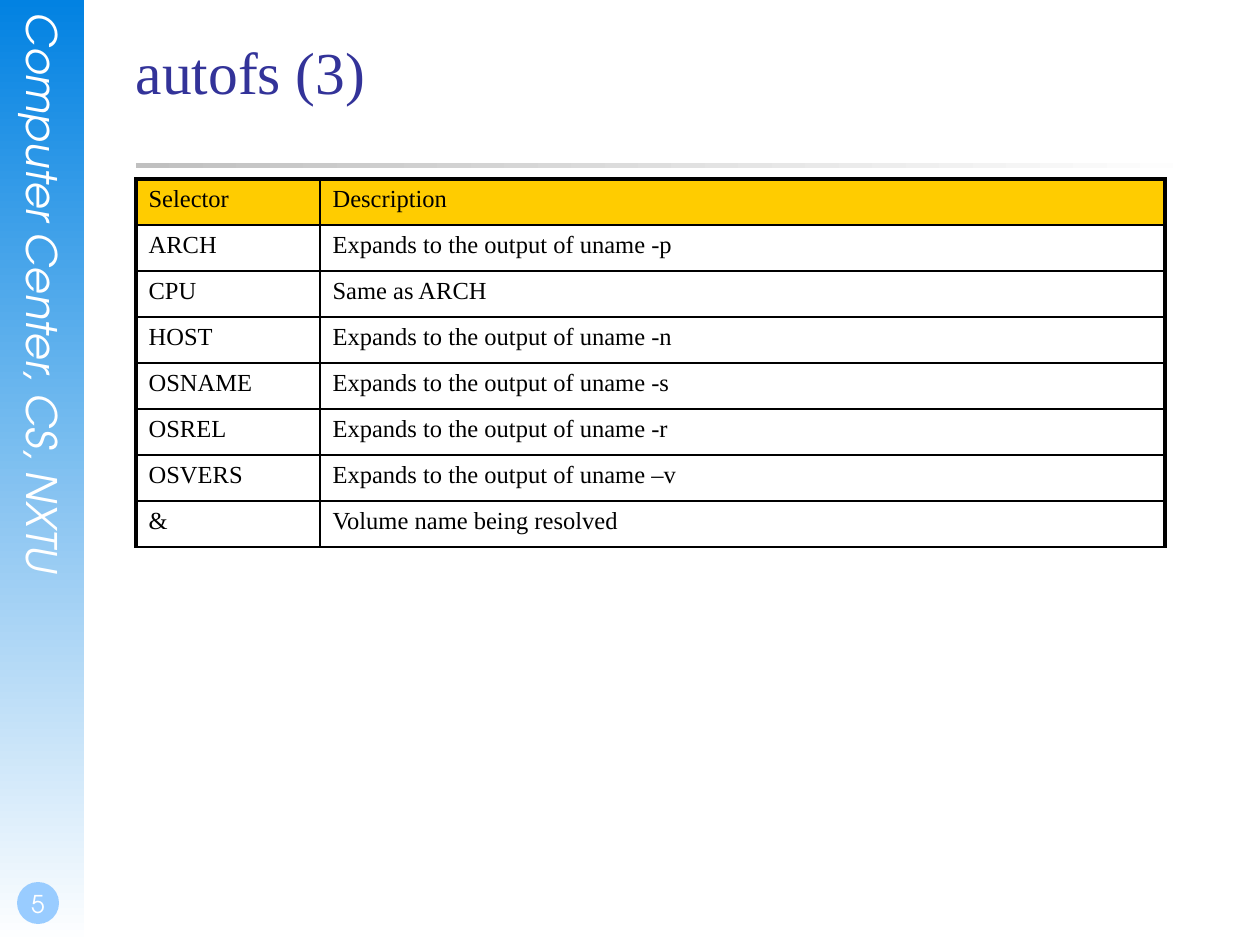
from lxml.etree import SubElement
from pptx import Presentation
from pptx.dml.color import RGBColor
from pptx.enum.shapes import MSO_SHAPE as SHAPE
from pptx.enum.text import MSO_ANCHOR as ANCHOR, PP_ALIGN as ALIGN
from pptx.oxml.ns import qn
from pptx.util import Emu, Pt

PX = 914400 / 126
SERIF, SANS = "Times New Roman", "TeX Gyre Adventor"


def px(*values):
    """Turn pixel lengths into EMU."""
    return [Emu(round(v * PX)) for v in values]


def rgb(color):
    return RGBColor.from_string(color)


prs = Presentation()
prs.slide_width, prs.slide_height = px(1260, 945)
s = prs.slides.add_slide(prs.slide_layouts[6])

# Sidebar, page number disc and title rule (angles run counter-clockwise)
for kind, box, colors, angle in [
    (SHAPE.RECTANGLE, (0, 0, 84, 945), ["0282E2", "FFFFFF"], 270),
    (SHAPE.OVAL, (17, 882, 42, 42), ["99CCFF"], None),
    (SHAPE.RECTANGLE, (136, 163, 1071, 5), ["C0C0C0", "FFFFFF"], 0),
]:
    sp = s.shapes.add_shape(kind, *px(*box))
    sp.shadow.inherit = False
    sp.line.fill.background()
    if angle is None:
        sp.fill.solid()
        sp.fill.fore_color.rgb = rgb(colors[0])
    else:
        sp.fill.gradient()
        sp.fill.gradient_angle = angle
        for stop, color in zip(sp.fill.gradient_stops, colors):
            stop.color.rgb = rgb(color)

# Sidebar caption, page number and title
for text, box, margins, font, size, color, align, anchor, vertical in [
    ("Computer Center, CS, NXTU", (19, 13, 50, 644), (0, 0, 0, 0),
     SANS, 24, "FFFFFF", ALIGN.LEFT, ANCHOR.TOP, True),
    ("5", (0, 861, 73, 63), (3, 0, 0, 6),
     SANS, 14, "FFFFFF", ALIGN.CENTER, ANCHOR.BOTTOM, False),
    ("autofs (3)", (136, 35, 1071, 158), (0, 0, 0, 0),
     SERIF, 34, "333399", ALIGN.LEFT, ANCHOR.TOP, False),
]:
    tf = s.shapes.add_textbox(*px(*box)).text_frame
    tf.word_wrap = True
    tf.vertical_anchor = anchor
    tf.margin_left, tf.margin_top, tf.margin_right, tf.margin_bottom = px(*margins)
    if vertical:
        tf._txBody.bodyPr.set("vert", "eaVert")
    p = tf.paragraphs[0]
    p.alignment = align
    r = p.add_run()
    r.text = text
    r.font.name, r.font.size, r.font.italic = font, Pt(size), vertical
    r.font.color.rgb = rgb(color)

# Selector table
rows = [
    ("Selector", "Description"),
    ("ARCH", "Expands to the output of uname -p"),
    ("CPU", "Same as ARCH"),
    ("HOST", "Expands to the output of uname -n"),
    ("OSNAME", "Expands to the output of uname -s"),
    ("OSREL", "Expands to the output of uname -r"),
    ("OSVERS", "Expands to the output of uname –v"),
    ("&", "Volume name being resolved"),
]
col_widths = px(184, 845)
table = s.shapes.add_table(len(rows), 2, *px(136, 179, 1029, 46 * len(rows))).table
for column, width in zip(table.columns, col_widths):
    column.width = width

for i, row in enumerate(rows):
    for j, text in enumerate(row):
        cell = table.cell(i, j)
        p = cell.text_frame.paragraphs[0]
        before = SubElement(p._p.get_or_add_pPr(), qn("a:spcBef"))
        SubElement(before, qn("a:spcPct"), val="25000")
        r = p.add_run()
        r.text = text
        r.font.name, r.font.size, r.font.bold = SERIF, Pt(14), False
        r.font.color.rgb = rgb("000000")

        # Thick outer sides and top, thin everywhere else; borders precede the fill
        tcPr = cell._tc.get_or_add_tcPr()
        for side, thick in [("L", j == 0), ("R", j == 1), ("T", i == 0), ("B", False)]:
            ln = SubElement(tcPr, qn(f"a:ln{side}"), w=str(Pt(2.25 if thick else 1)))
            fill = SubElement(ln, qn("a:solidFill"))
            SubElement(fill, qn("a:srgbClr"), val="000000")
        if i == 0:
            cell.fill.solid()
            cell.fill.fore_color.rgb = rgb("FFCC00")
        else:
            cell.fill.background()

prs.save("out.pptx")
